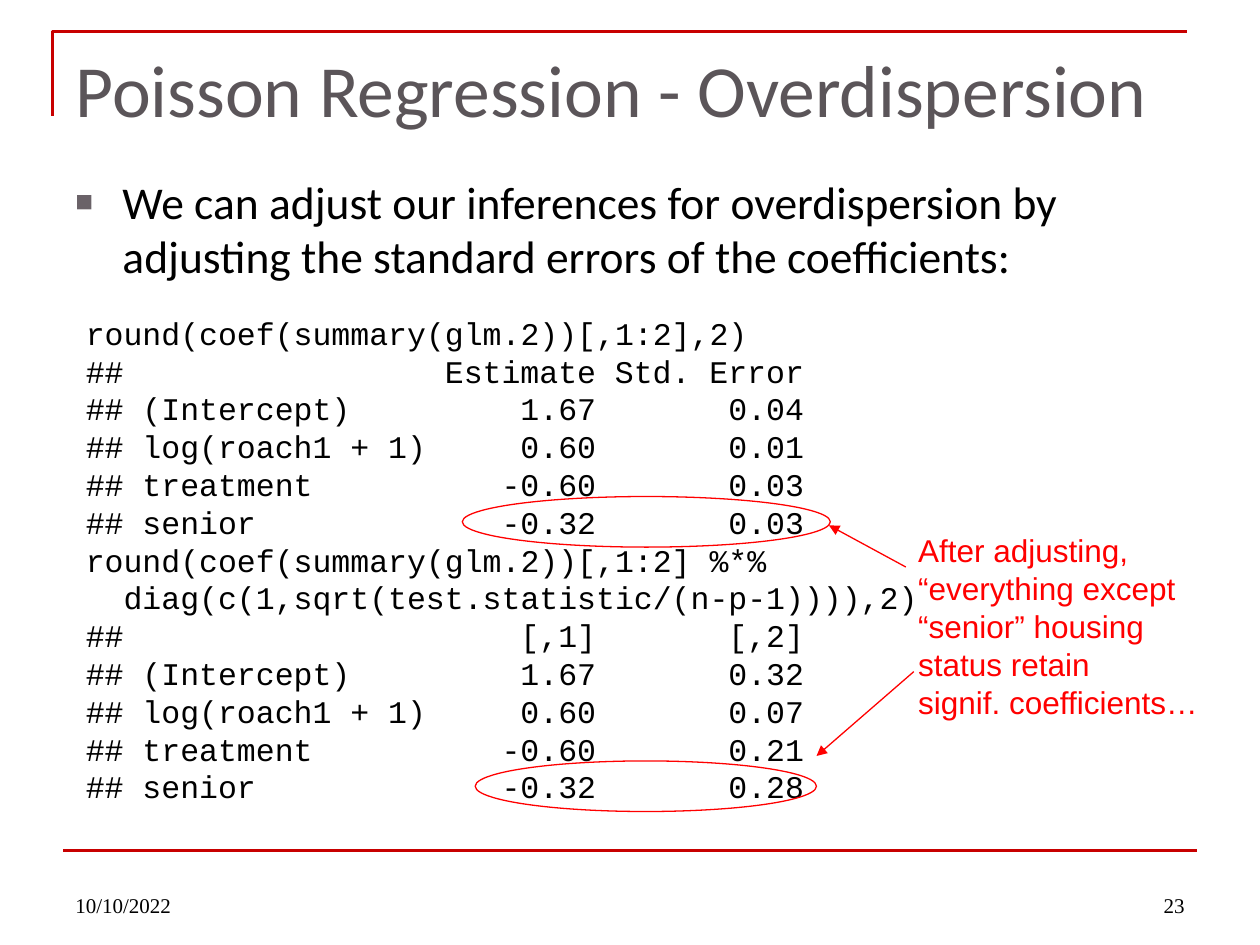
from dataclasses import dataclass
from lxml.etree import SubElement
from pptx import Presentation
from pptx.dml.color import RGBColor
from pptx.enum.shapes import MSO_CONNECTOR, MSO_SHAPE
from pptx.enum.text import MSO_ANCHOR, MSO_AUTO_SIZE, PP_ALIGN
from pptx.oxml import parse_xml
from pptx.oxml.ns import nsdecls, qn
from pptx.util import Cm, Pt


@dataclass(frozen=True)
class Style:
    face: str
    size: int
    color: str


class Theme:
    title = Style("Calibri", 42, "5B5559")
    body = Style("Calibri", 26, "000000")
    code = Style("Courier New", 18, "000000")
    note = Style("Arial", 18, "FF0000")
    foot = Style("Times New Roman", 12, "000000")
    rule = ("C80000", 1.5)
    mark = ("FF0000", 0.75)
    bullet = "6A6268"


TITLE = "Poisson Regression - Overdispersion"
POINT = ("We can adjust our inferences for overdispersion by "
         "adjusting the standard errors of the coefficients:")
# One tuple per line: label, then the two right-aligned columns
CODE = [
    ("round(coef(summary(glm.2))[,1:2],2)",),
    ("##", "Estimate", "Std. Error"),
    ("## (Intercept)", "1.67", "0.04"),
    ("## log(roach1 + 1)", "0.60", "0.01"),
    ("## treatment", "-0.60", "0.03"),
    ("## senior", "-0.32", "0.03"),
    ("round(coef(summary(glm.2))[,1:2] %*%",),
    ("diag(c(1,sqrt(test.statistic/(n-p-1)))),2)",),
    ("##", "[,1]", "[,2]"),
    ("## (Intercept)", "1.67", "0.32"),
    ("## log(roach1 + 1)", "0.60", "0.07"),
    ("## treatment", "-0.60", "0.21"),
    ("## senior", "-0.32", "0.28"),
]
NOTE = ["After adjusting,", "“everything except",
        "“senior” housing \nstatus retain \nsignif. coefficients…"]
FOOT = [("10/10/2022", 1.27, PP_ALIGN.LEFT), ("23", 18.21, PP_ALIGN.RIGHT)]
CORNER = [(1.06, 2.33), (1.06, 0.64), (23.92, 0.64)]
OVALS = [(9.58, 15.34, 6.88, 1.02), (9.32, 10.01, 7.42, 1.02)]
ARROWS = [(18.26, 11.43, 16.71, 10.59), (18.42, 13.54, 16.46, 15.24)]
CHAR = 0.381  # width of one code character in cm
STOPS = (27, 38)  # characters at which the columns end


def style_line(item, look):
    item.line.color.rgb = RGBColor.from_string(look[0])
    item.line.width = Pt(look[1])


def write(frame, lines, style, align=PP_ALIGN.LEFT):
    for i, line in enumerate(lines):
        para = frame.add_paragraph() if i else frame.paragraphs[0]
        para.text = line
        para.alignment = align
        font = para.font
        font.name, font.size = style.face, Pt(style.size)
        font.color.rgb = RGBColor.from_string(style.color)


def add_text(slide, box, lines, style, wrap=True, align=PP_ALIGN.LEFT):
    frame = slide.shapes.add_textbox(*map(Cm, box)).text_frame
    frame.word_wrap = wrap
    if not wrap:
        frame.auto_size = MSO_AUTO_SIZE.SHAPE_TO_FIT_TEXT
    write(frame, lines, style, align)
    return frame


def add_props(para, *parts):
    """Put XML parts in the paragraph properties, ahead of the font."""
    props = para._p.get_or_add_pPr()
    for part in parts:
        name, rest = part.split(" ", 1)
        props.find(qn("a:defRPr")).addprevious(
            parse_xml(f"<a:{name} {nsdecls('a')} {rest}"))


def indent(para, left, first=0):
    props = para._p.get_or_add_pPr()
    props.set("marL", str(Cm(left)))
    props.set("indent", str(Cm(first)))


def add_line(slide, ends, look, arrow=False):
    line = slide.shapes.add_connector(MSO_CONNECTOR.STRAIGHT, *map(Cm, ends))
    style_line(line, look)
    if arrow:
        SubElement(line.line._get_or_add_ln(), qn("a:tailEnd"), type="triangle")
    SubElement(line._element.spPr, qn("a:effectLst"))


def add_frame(slide):
    start, *rest = [(Cm(x), Cm(y)) for x, y in CORNER]
    draw = slide.shapes.build_freeform(*start)
    draw.add_line_segments(rest, close=False)
    corner = draw.convert_to_shape()
    corner.fill.background()
    corner.shadow.inherit = False
    style_line(corner, Theme.rule)
    add_line(slide, (1.27, 17.15, 24.13, 17.15), Theme.rule)
    for text, left, align in FOOT:
        frame = add_text(slide, (left, 17.36, 5.92, 1.27), [text], Theme.foot,
                         align=align)
        frame.vertical_anchor = MSO_ANCHOR.BOTTOM


def add_title(slide):
    title = slide.shapes.title
    title.left, title.top, title.width, title.height = map(
        Cm, (1.27, 0.76, 22.86, 3.18))
    frame = title.text_frame
    frame.auto_size = MSO_AUTO_SIZE.NONE
    frame.vertical_anchor = MSO_ANCHOR.TOP
    write(frame, [TITLE], Theme.title)


def add_point(slide):
    frame = add_text(slide, (1.27, 3.38, 22.86, 13.64), [POINT], Theme.body)
    para = frame.paragraphs[0]
    para.space_before = Pt(5)
    indent(para, 0.95, -0.95)
    add_props(para, f'buClr ><a:srgbClr val="{Theme.bullet}"/></a:buClr>',
              'buSzPct val="65000"/>', 'buFont typeface="Arial"/>',
              'buChar char="■"/>')


def add_code(slide):
    lines = ["\t".join(row) for row in CODE]
    frame = add_text(slide, (1.48, 6.2, 17.37, 10.26), lines, Theme.code, False)
    tabs = "".join(f'<a:tab pos="{Cm(n * CHAR)}" algn="r"/>' for n in STOPS)
    for row, para in zip(CODE, frame.paragraphs):
        if len(row) > 1:
            add_props(para, f"tabLst >{tabs}</a:tabLst>")
        elif row[0].startswith("diag"):
            indent(para, 2 * CHAR)


def add_marks(slide):
    for box in OVALS:
        oval = slide.shapes.add_shape(MSO_SHAPE.OVAL, *map(Cm, box))
        oval.fill.background()
        oval.shadow.inherit = False
        style_line(oval, Theme.mark)
    add_text(slide, (18.26, 10.59, 6.2, 4.11), NOTE, Theme.note, False)
    for ends in ARROWS:
        add_line(slide, ends, Theme.mark, True)


def main():
    deck = Presentation()
    deck.slide_width, deck.slide_height = Cm(25.4), Cm(19.05)
    slide = deck.slides.add_slide(deck.slide_layouts[5])
    for part in (add_frame, add_title, add_point, add_code, add_marks):
        part(slide)
    deck.save("out.pptx")


if __name__ == "__main__":
    main()
